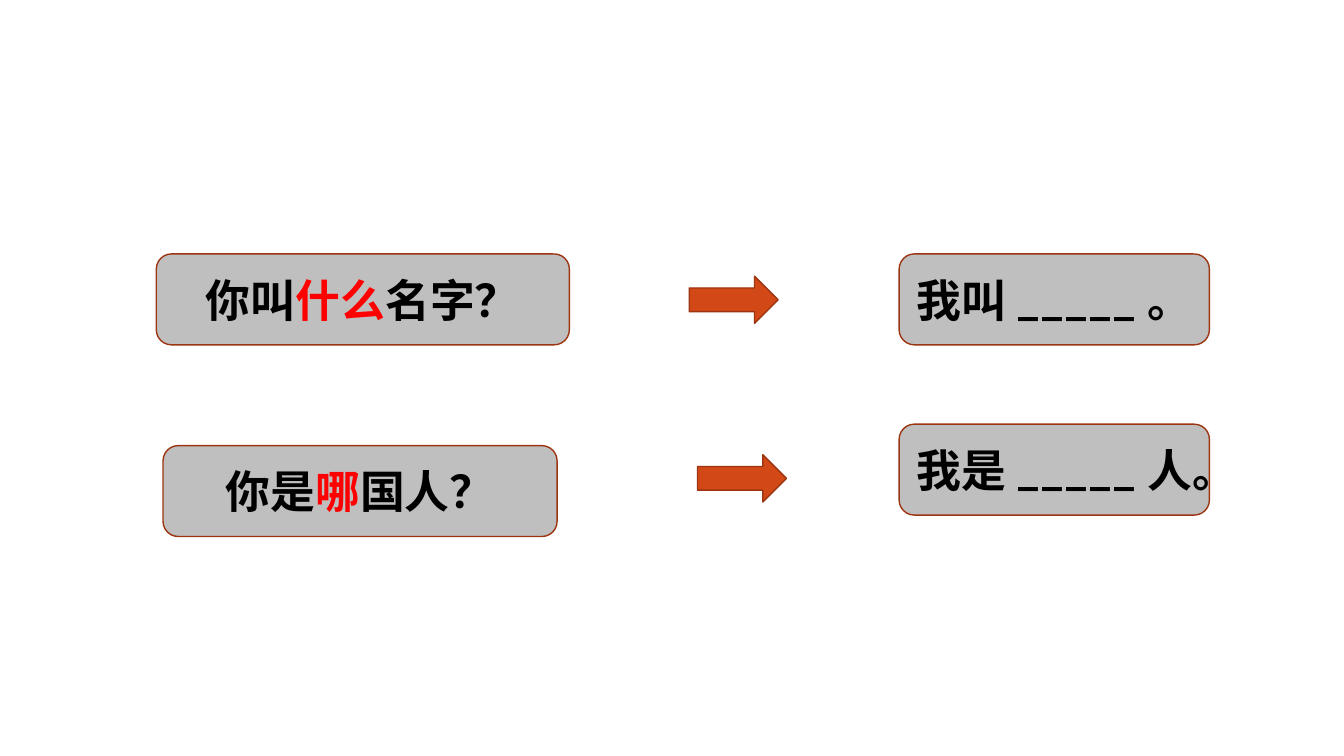
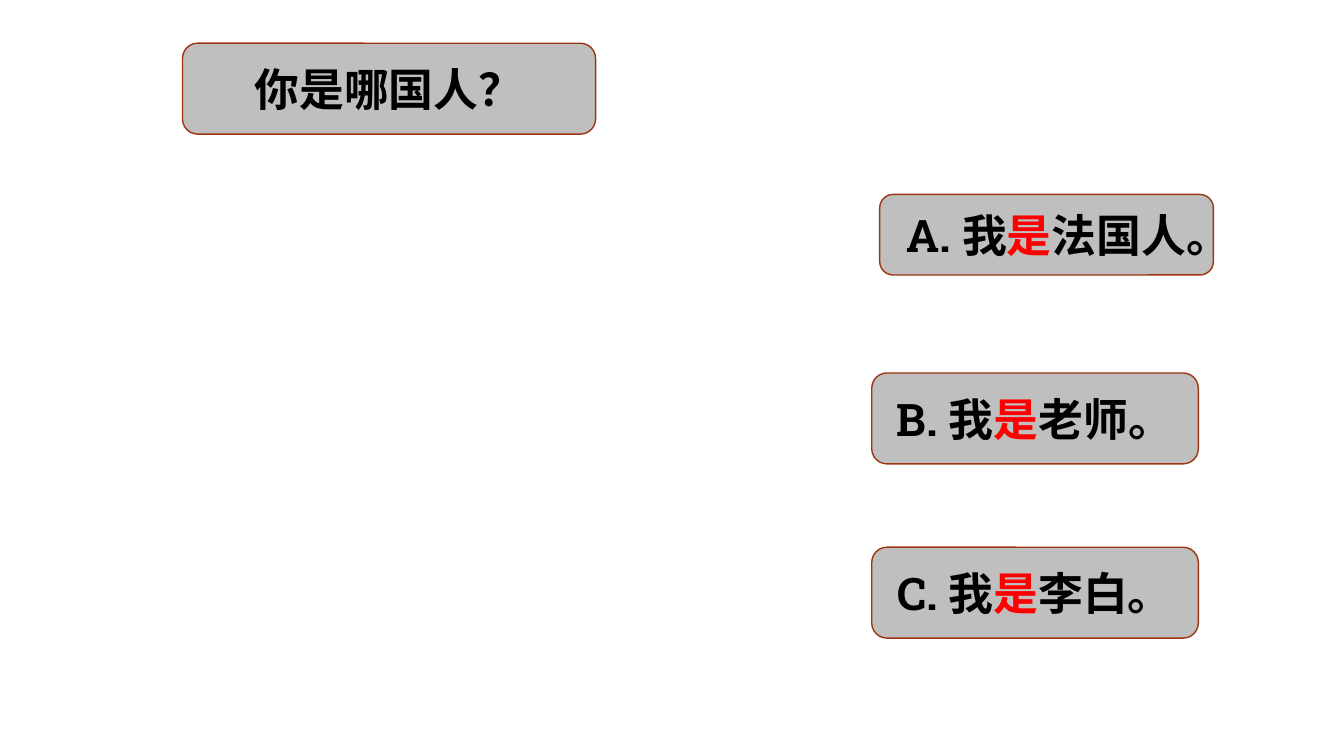
from dataclasses import dataclass

from pptx import Presentation
from pptx.dml.color import RGBColor
from pptx.enum.lang import MSO_LANGUAGE_ID
from pptx.enum.shapes import MSO_SHAPE
from pptx.enum.text import MSO_ANCHOR, PP_ALIGN
from pptx.shapes.autoshape import Shape
from pptx.slide import Slide
from pptx.util import Cm, Pt

GREY = RGBColor(0xBF, 0xBF, 0xBF)
ORANGE = RGBColor(0xD3, 0x48, 0x17)
BROWN = RGBColor(0x9C, 0x35, 0x11)
BLACK = RGBColor(0x00, 0x00, 0x00)
RED = RGBColor(0xFF, 0x00, 0x00)
FONT = "Roboto Slab"
FONT_SIZE = Pt(32)

CARD_HEIGHT = 2.29
ARROW_WIDTH, ARROW_HEIGHT = 2.24, 1.19
ANSWER_LEFT, ANSWER_WIDTH = 22.66, 7.82
OPTION_LEFT, OPTION_WIDTH = 21.97, 8.23


@dataclass(frozen=True)
class Card:
    """A rounded box, in centimetres; `stressed` is the part of its text in red."""
    left: float
    top: float
    width: float
    text: str
    stressed: str = ""
    height: float = CARD_HEIGHT


@dataclass(frozen=True)
class Arrow:
    left: float
    top: float


DIALOGUE_CARDS = [
    Card(3.94, 6.4, 10.41, "你叫什么名字？", "什么"),
    Card(4.11, 11.23, 9.93, "你是哪国人？", "哪"),
    Card(ANSWER_LEFT, 6.4, ANSWER_WIDTH, "我叫_____。"),
    Card(ANSWER_LEFT, 10.69, ANSWER_WIDTH, "我是_____人。"),
]
DIALOGUE_ARROWS = [Arrow(17.37, 6.96), Arrow(17.58, 11.46)]
CHOICE_CARDS = [
    Card(4.6, 1.09, 10.41, "你是哪国人？"),
    Card(22.17, 4.9, 8.41, "A.我是法国人。", "是", height=2.03),
    Card(OPTION_LEFT, 9.4, OPTION_WIDTH, "B.我是老师。", "是"),
    Card(OPTION_LEFT, 13.79, OPTION_WIDTH, "C.我是李白。", "是"),
]


def add_filled_shape(slide: Slide, kind: MSO_SHAPE, left: float, top: float,
                     width: float, height: float, fill: RGBColor) -> Shape:
    shape = slide.shapes.add_shape(kind, Cm(left), Cm(top), Cm(width), Cm(height))
    shape.shadow.inherit = False
    shape.fill.solid()
    shape.fill.fore_color.rgb = fill
    shape.line.color.rgb = BROWN
    shape.line.width = Pt(1)
    return shape


def split_stressed(card: Card) -> list[tuple[str, RGBColor]]:
    """Cut the text of a card into coloured parts."""
    if not card.stressed:
        return [(card.text, BLACK)]
    before, stressed, after = card.text.partition(card.stressed)
    return [(before, BLACK), (stressed, RED), (after, BLACK)]


def draw_card(slide: Slide, card: Card) -> None:
    shape = add_filled_shape(slide, MSO_SHAPE.ROUNDED_RECTANGLE, card.left, card.top,
                             card.width, card.height, GREY)
    text_frame = shape.text_frame
    text_frame.word_wrap = True
    text_frame.vertical_anchor = MSO_ANCHOR.MIDDLE
    paragraph = text_frame.paragraphs[0]
    paragraph.alignment = PP_ALIGN.CENTER
    for text, color in split_stressed(card):
        run = paragraph.add_run()
        run.text = text
        run.font.name = FONT
        run.font.size = FONT_SIZE
        run.font.bold = True
        run.font.color.rgb = color
        run.font.language_id = MSO_LANGUAGE_ID.SIMPLIFIED_CHINESE


def draw_arrow(slide: Slide, arrow: Arrow) -> None:
    add_filled_shape(slide, MSO_SHAPE.RIGHT_ARROW, arrow.left, arrow.top,
                     ARROW_WIDTH, ARROW_HEIGHT, ORANGE)


def add_card_slide(presentation: Presentation, cards: list[Card],
                   arrows: list[Arrow]) -> None:
    slide = presentation.slides.add_slide(presentation.slide_layouts[6])
    for card in cards:
        draw_card(slide, card)
    for arrow in arrows:
        draw_arrow(slide, arrow)


def main() -> None:
    presentation = Presentation()
    presentation.slide_width = Cm(33.87)
    presentation.slide_height = Cm(19.05)
    add_card_slide(presentation, DIALOGUE_CARDS, DIALOGUE_ARROWS)
    add_card_slide(presentation, CHOICE_CARDS, [])
    presentation.save("out.pptx")


if __name__ == "__main__":
    main()
